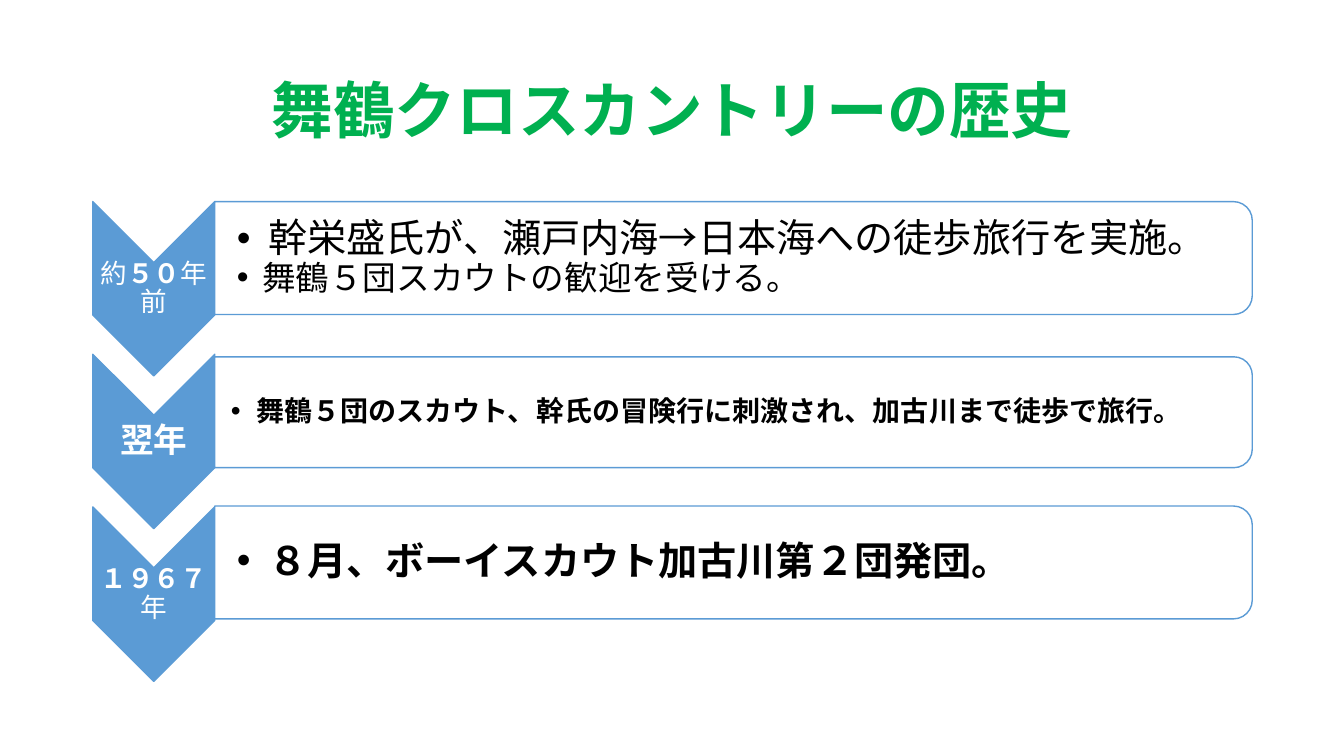
from lxml import etree
from pptx import Presentation
from pptx.dml.color import RGBColor
from pptx.enum import shapes, text
from pptx.oxml import ns
from pptx.util import Inches, Pt

GREEN = RGBColor(0x00, 0xB0, 0x50)
BLUE = RGBColor(0x5B, 0x9B, 0xD5)
WHITE = RGBColor(0xFF, 0xFF, 0xFF)
BLACK = RGBColor(0x00, 0x00, 0x00)

TITLE = "舞鶴クロスカントリーの歴史"
# Each text is a list of (words, bold) runs; bar is (centre, height)
STEPS = [
    {"label": [("約", False), ("５０", True), ("年前", False)], "label_size": 19,
     "bar": (2.56, 1.12), "inset": 0.22,
     "items": [("幹栄盛氏が、瀬戸内海→日本海への徒歩旅行を実施。", False, 28, 0.31),
               ("舞鶴５団スカウトの歓迎を受ける。", False, 24, 0.25)]},
    {"label": [("翌年", True)], "label_size": 24,
     "bar": (4.09, 1.1), "inset": 0.16,
     "items": [("舞鶴５団のスカウト、幹氏の冒険行に刺激され、加古川まで徒歩で旅行。", True, 20, 0.25)]},
    {"label": [("１９６７", True), ("年", False)], "label_size": 19,
     "bar": (5.58, 1.12), "inset": 0.22,
     "items": [("８月、ボーイスカウト加古川第２団発団。", True, 28, 0.31)]},
]
LEFT, TOP, PITCH = 0.92, 2.0, 1.515
CHEVRON_W, CHEVRON_H = 1.21, 1.73
LABEL_H = 0.52
BAR_LEFT, BAR_W = LEFT + CHEVRON_W, 10.29
BODY_W, BODY_H = 10.24, 1.01


def write(p, runs, size, color, align=None, indent=None):
    """Fill one paragraph with runs; an indent makes it a bullet."""
    p.line_spacing = 0.9
    p.alignment = align
    if indent:
        pPr = p._p.get_or_add_pPr()
        pPr.set("marL", str(Inches(indent)))
        pPr.set("indent", str(-Inches(indent)))
        etree.SubElement(pPr, ns.qn("a:buFont")).set("typeface", "Arial")
        etree.SubElement(pPr, ns.qn("a:buChar")).set("char", "•")
    for words, bold in runs:
        r = p.add_run()
        r.text = words
        r.font.name = "Calibri"
        r.font.size = Pt(size)
        r.font.bold = bold
        r.font.color.rgb = color


def add_box(s, left, top, width, height, inset, left_inset):
    tf = s.shapes.add_textbox(*map(Inches, (left, top, width, height))).text_frame
    tf.word_wrap = True
    tf.vertical_anchor = text.MSO_ANCHOR.MIDDLE
    tf.margin_top = tf.margin_right = tf.margin_bottom = Inches(inset)
    tf.margin_left = Inches(left_inset)
    return tf


def add_turned(s, kind, left, middle, width, height, fill):
    """Add a shape turned by 90 degrees that covers the given visible area."""
    sp = s.shapes.add_shape(
        kind, Inches(left + (width - height) / 2), Inches(middle - width / 2),
        Inches(height), Inches(width))
    sp.rotation = 90
    sp.shadow.inherit = False
    sp.fill.solid()
    sp.fill.fore_color.rgb = fill
    sp.line.color.rgb = BLUE
    sp.line.width = Pt(1)
    return sp


def main():
    prs = Presentation()
    prs.slide_width, prs.slide_height = Inches(13.33), Inches(7.5)
    s = prs.slides.add_slide(prs.slide_layouts[5])

    # Title
    title = s.shapes.title
    title.left, title.top, title.width, title.height = map(
        Inches, (0.92, 0.4, 11.5, 1.45))
    title.text_frame.vertical_anchor = text.MSO_ANCHOR.MIDDLE
    write(title.text_frame.paragraphs[0], [(TITLE, True)], 44, GREEN,
          align=text.PP_ALIGN.CENTER)

    for i, step in enumerate(STEPS):
        # Chevron with its date
        middle = TOP + i * PITCH + CHEVRON_H / 2
        add_turned(s, shapes.MSO_SHAPE.CHEVRON, LEFT, middle,
                   CHEVRON_W, CHEVRON_H, BLUE)
        tf = add_box(s, LEFT, middle - LABEL_H / 2, CHEVRON_W, LABEL_H, 0.01, 0.01)
        write(tf.paragraphs[0], step["label"], step["label_size"], WHITE,
              align=text.PP_ALIGN.CENTER)

        # Bar with its bullets
        centre, height = step["bar"]
        add_turned(s, shapes.MSO_SHAPE.ROUND_2_SAME_RECTANGLE, BAR_LEFT, centre,
                   BAR_W, height, WHITE)
        tf = add_box(s, BAR_LEFT, centre - BODY_H / 2, BODY_W, BODY_H,
                     0.02, step["inset"])
        for n, (words, bold, size, indent) in enumerate(step["items"]):
            p = tf.add_paragraph() if n else tf.paragraphs[0]
            write(p, [(words, bold)], size, BLACK, indent=indent)

    prs.save("out.pptx")


if __name__ == "__main__":
    main()
